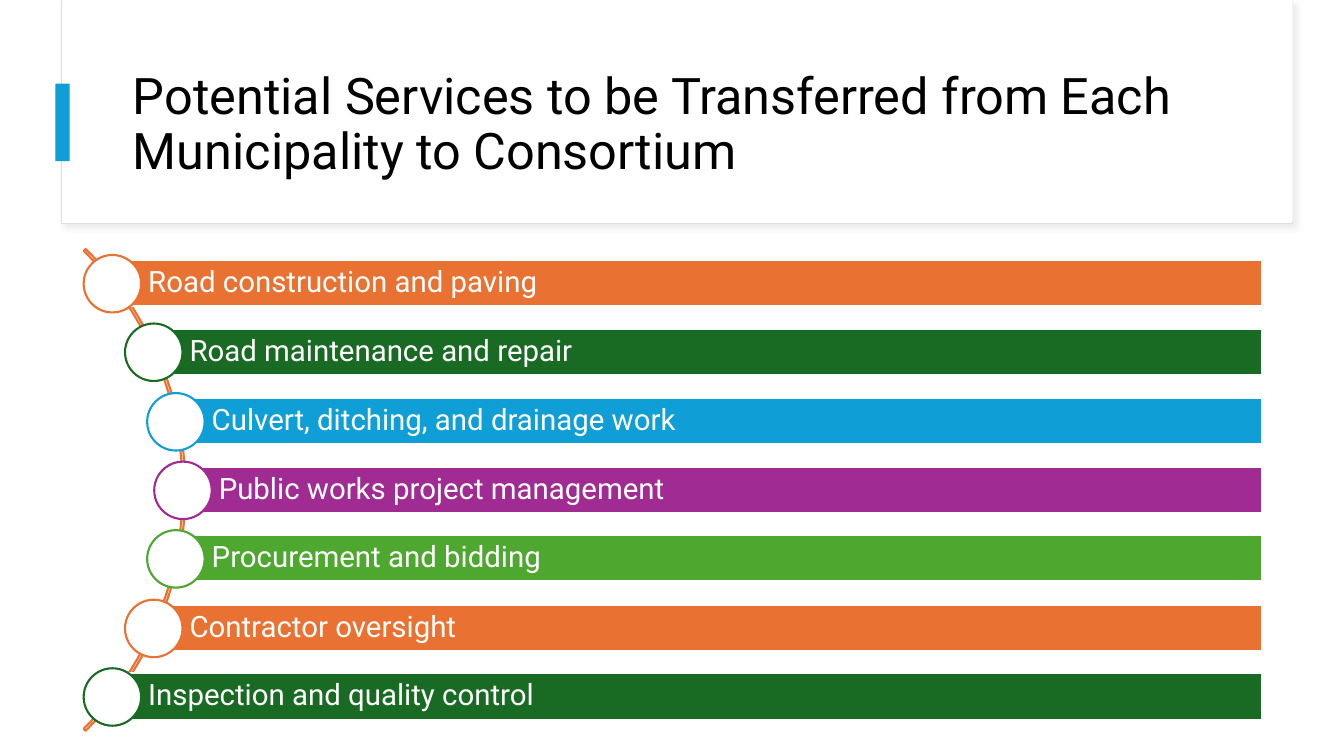
"""Build a slide listing municipal services to be transferred to a consortium."""
import math

import lxml.etree
import pptx
import pptx.dml.color
import pptx.enum.shapes
import pptx.enum.text
import pptx.oxml.ns
import pptx.util

SCALE = 9144
THEME = {
    "font": "Roboto", "title_size": 36, "service_size": 21,
    "black": "000000", "white": "FFFFFF", "border": "DEDEDE", "shadow": "D9D9D9",
    "orange": "E97132", "green": "196B24", "blue": "0F9ED5",
    "purple": "A02B93", "lime": "4EA72E",
}
SHAPES = pptx.enum.shapes.MSO_SHAPE

presentation = pptx.Presentation()
presentation.slide_width = 1333 * SCALE
presentation.slide_height = 750 * SCALE
slide = presentation.slides.add_slide(presentation.slide_layouts[6])


def add_shape(kind, left, top, width, height, fill=None, line=None, line_width=1.5):
    shape = slide.shapes.add_shape(kind, *(length * SCALE for length in (left, top, width, height)))
    shape.shadow.inherit = False
    for paint, color in ((shape.fill, fill), (shape.line.fill, line)):
        if color:
            paint.solid()
            paint.fore_color.rgb = pptx.dml.color.RGBColor.from_string(THEME[color])
        else:
            paint.background()
    if line:
        shape.line.width = pptx.util.Pt(line_width)
    return shape


def write_text(shape, text, size, color, insets):
    frame = shape.text_frame
    frame.word_wrap = True
    frame.vertical_anchor = pptx.enum.text.MSO_ANCHOR.MIDDLE
    frame.margin_left, frame.margin_top, frame.margin_right, frame.margin_bottom = (
        inset * SCALE for inset in insets)
    paragraph = frame.paragraphs[0]
    paragraph.text = text
    paragraph.alignment = pptx.enum.text.PP_ALIGN.LEFT
    paragraph.line_spacing = 0.9
    paragraph.font.name = THEME["font"]
    paragraph.font.size = pptx.util.Pt(THEME[size])
    paragraph.font.color.rgb = pptx.dml.color.RGBColor.from_string(THEME[color])


header = add_shape(SHAPES.RECTANGLE, 61, 1, 1221, 221, fill="white", line="border", line_width=0.75)
effects = header._element.spPr.find(pptx.oxml.ns.qn("a:effectLst"))
shadow = lxml.etree.SubElement(
    effects, pptx.oxml.ns.qn("a:outerShdw"),
    blurRad=str(pptx.util.Pt(4)), dist=str(pptx.util.Pt(3)), dir="2700000")
shadow_color = lxml.etree.SubElement(shadow, pptx.oxml.ns.qn("a:srgbClr"), val=THEME["shadow"])
lxml.etree.SubElement(shadow_color, pptx.oxml.ns.qn("a:alpha"), val="50000")

add_shape(SHAPES.RECTANGLE, 62, 0, 1220, 220, fill="white")
title = slide.shapes.add_textbox(122 * SCALE, 60 * SCALE, 1112 * SCALE, 129 * SCALE)
write_text(title, "Potential Services to be Transferred from Each Municipality to Consortium",
           size="title_size", color="black", insets=(10, 5, 10, 5))
add_shape(SHAPES.RECTANGLE, 55, 83, 14, 77, fill="blue")

arc = add_shape(SHAPES.BLOCK_ARC, -492, 148, 676, 676, line="orange")
for index, adjustment in enumerate((189, 27, 0.004)):
    arc.adjustments[index] = adjustment

services = [
    ("Road construction and paving", "orange"),
    ("Road maintenance and repair", "green"),
    ("Culvert, ditching, and drainage work", "blue"),
    ("Public works project management", "purple"),
    ("Procurement and bidding", "lime"),
    ("Contractor oversight", "orange"),
    ("Inspection and quality control", "green"),
]
ARC_X, ARC_Y, RADIUS = -154, 486, 335
BAR_RIGHT, BAR_HEIGHT, DOT_SIZE = 1252, 46, 57

for index, (service, color) in enumerate(services):
    offset = round((index - 3) * 68.4)
    center_x = ARC_X + round(math.sqrt(RADIUS ** 2 - offset ** 2))
    center_y = ARC_Y + offset
    bar = add_shape(SHAPES.RECTANGLE, center_x, center_y - BAR_HEIGHT // 2,
                    BAR_RIGHT - center_x, BAR_HEIGHT, fill=color, line="white")
    write_text(bar, service, size="service_size", color="white", insets=(36, 6, 6, 6))
    add_shape(SHAPES.OVAL, center_x - DOT_SIZE // 2, center_y - DOT_SIZE // 2,
              DOT_SIZE, DOT_SIZE, fill="white", line=color)

presentation.save("out.pptx")
